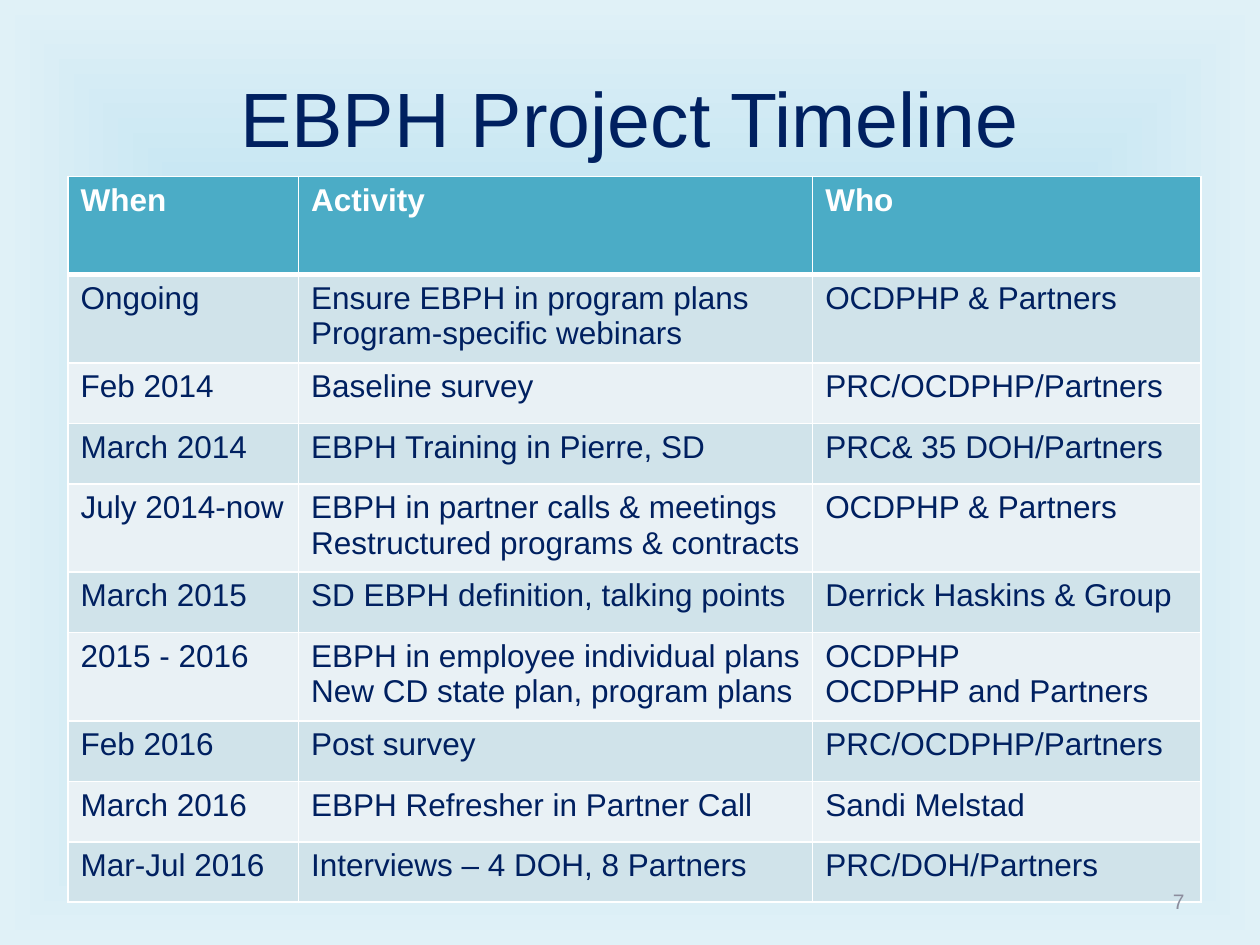
from lxml import etree
from pptx import Presentation
from pptx.dml.color import RGBColor
from pptx.enum.text import MSO_ANCHOR as Anchor, PP_ALIGN as Align
from pptx.oxml import parse_xml
from pptx.oxml.ns import nsdecls, qn
from pptx.util import Inches, Pt

NAVY, WHITE, GREY = "002060", "FFFFFF", "8C8D9D"
HEADER_FILL, BAND_FILLS = "4BACC6", ("D0E3EA", "E9F1F5")

COLUMN_WIDTHS = (1.83, 4.08, 3.08)
HEADER_HEIGHT, ROW_HEIGHT = 0.78, 0.48
TIMELINE = [
    ("When", "Activity", "Who"),
    ("Ongoing", "Ensure EBPH in program plans\nProgram-specific webinars", "OCDPHP & Partners"),
    ("Feb 2014", "Baseline survey", "PRC/OCDPHP/Partners"),
    ("March 2014", "EBPH Training in Pierre, SD", "PRC& 35 DOH/Partners"),
    ("July 2014-now", "EBPH in partner calls & meetings\nRestructured programs & contracts",
     "OCDPHP & Partners"),
    ("March 2015", "SD EBPH definition, talking points", "Derrick Haskins & Group"),
    ("2015 - 2016", "EBPH in employee individual plans\nNew CD state plan, program plans",
     "OCDPHP\nOCDPHP and Partners"),
    ("Feb 2016", "Post survey", "PRC/OCDPHP/Partners"),
    ("March 2016", "EBPH Refresher in Partner Call", "Sandi Melstad"),
    ("Mar-Jul 2016", "Interviews – 4 DOH, 8 Partners", "PRC/DOH/Partners"),
]


def color(value):
    return RGBColor.from_string(value)


def write(frame, text, size=18, ink=NAVY, bold=False, align=Align.LEFT, font="Arial"):
    """Fill a text frame, one paragraph per line of text."""
    for index, line in enumerate(text.split("\n")):
        para = frame.add_paragraph() if index else frame.paragraphs[0]
        para.alignment = align
        span = para.add_run()
        span.text = line
        span.font.name, span.font.size, span.font.bold = font, Pt(size), bold
        span.font.color.rgb = color(ink)


class SlideBuilder:
    def __init__(self, deck):
        self.page = deck.slides.add_slide(deck.slide_layouts[6])

    def background(self, stops):
        """Rectangular gradient that runs from the centre to the edges."""
        fill = self.page.background.fill
        fill.gradient()
        gradient = next(self.page.element.iter(qn("a:gradFill")))
        marks = "".join(
            f'<a:gs pos="{position * 1000}"><a:srgbClr val="{value}"/></a:gs>'
            for position, value in stops)
        gradient.getparent().replace(gradient, parse_xml(
            f'<a:gradFill {nsdecls("a")} rotWithShape="1"><a:gsLst>{marks}</a:gsLst>'
            '<a:path path="shape"><a:fillToRect l="50000" t="50000" r="50000" b="50000"/>'
            '</a:path></a:gradFill>'))

    def text(self, text, left, top, width, height, **style):
        box = self.page.shapes.add_textbox(
            Inches(left), Inches(top), Inches(width), Inches(height))
        box.text_frame.word_wrap = True
        box.text_frame.vertical_anchor = Anchor.MIDDLE
        write(box.text_frame, text, **style)

    def borders(self, cell, bottom):
        """White cell borders; they must come before the cell's fill."""
        properties = cell._tc.get_or_add_tcPr()
        for side, points in (("L", 1), ("R", 1), ("T", 1), ("B", bottom)):
            line = etree.SubElement(properties, qn(f"a:ln{side}"), w=str(Pt(points)))
            solid = etree.SubElement(line, qn("a:solidFill"))
            etree.SubElement(solid, qn("a:srgbClr"), val=WHITE)

    def table(self, rows, left, top):
        heights = [HEADER_HEIGHT] + [ROW_HEIGHT] * (len(rows) - 1)
        table = self.page.shapes.add_table(
            len(rows), len(COLUMN_WIDTHS), Inches(left), Inches(top),
            Inches(sum(COLUMN_WIDTHS)), Inches(sum(heights))).table
        for column, width in zip(table.columns, COLUMN_WIDTHS):
            column.width = Inches(width)
        for index, (row, height, texts) in enumerate(zip(table.rows, heights, rows)):
            row.height = Inches(height)
            header = index == 0
            for cell, text in zip(row.cells, texts):
                self.borders(cell, bottom=3 if header else 1)
                cell.fill.solid()
                cell.fill.fore_color.rgb = color(
                    HEADER_FILL if header else BAND_FILLS[(index - 1) % 2])
                write(cell.text_frame, text, ink=WHITE if header else NAVY, bold=header)


def main():
    deck = Presentation()
    deck.slide_width, deck.slide_height = Inches(10), Inches(7.5)
    slide = SlideBuilder(deck)

    # Background and title
    slide.background([(0, "DBEEF4"), (50, "C0E3F1"), (100, "E0F1F7")])
    slide.text("EBPH Project Timeline", 0.5, 0.3, 9, 1.25, size=44, align=Align.CENTER)

    # Timeline table
    slide.table(TIMELINE, 0.54, 1.4)

    # Page number
    slide.text("7", 7.17, 6.95, 2.33, 0.4, size=12, ink=GREY, align=Align.RIGHT)

    deck.save("out.pptx")


if __name__ == "__main__":
    main()
